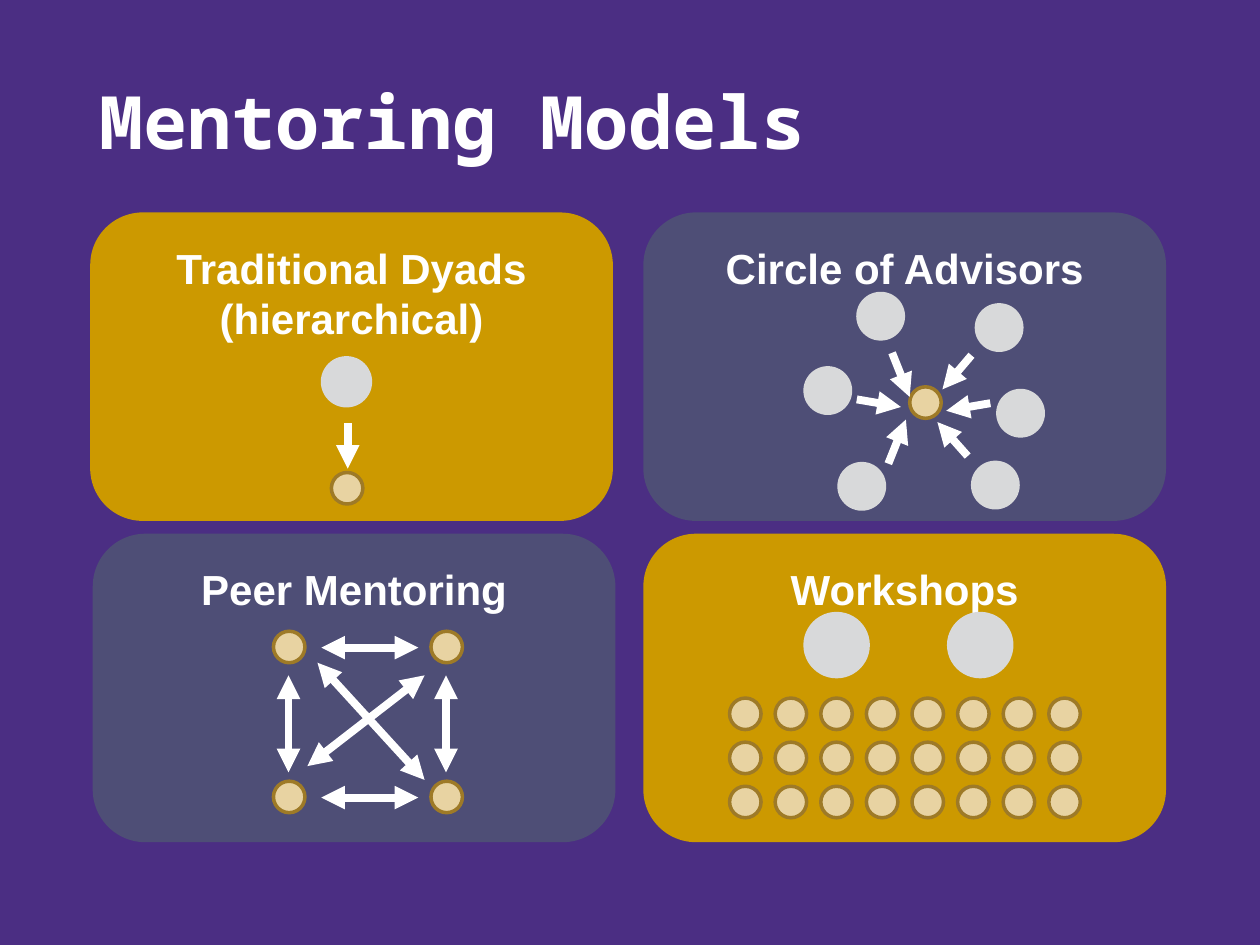
from lxml import etree
from pptx import Presentation
from pptx import util as u
from pptx.dml.color import RGBColor
from pptx.enum import shapes, text
from pptx.oxml.ns import qn

COLORS = {
    "purple": "4B2E83",
    "gold": "CC9900",
    "slate": "4E4E76",
    "white": "FFFFFF",
    "gray": "D8D9DA",
    "tan": "E8D3A2",
    "brown": "9E7A27",
}
COLS, ROWS = 100, 75
WIDTH, HEIGHT = u.Inches(10), u.Inches(7.5)
CARD_W, CARD_H = 41.2, 24.2
LEFT, RIGHT, TOP, BOTTOM = 7.3, 51.2, 17, 42.5
MENTEE, ADVISOR = 2.5, 3.6


def col(n):
    return round(WIDTH * n / COLS)


def row(n):
    return round(HEIGHT * n / ROWS)


def color(name):
    return RGBColor.from_string(COLORS[name])


def style_text(p, size, font):
    for r in p.runs:
        r.font.size = u.Pt(size)
        r.font.name = font
        r.font.bold = True
        r.font.color.rgb = color("white")


def add_shape(parent, kind, x, y, w, h, fill, line):
    sp = parent.add_shape(kind, col(x), row(y), col(w), row(h))
    sp.shadow.inherit = False
    sp.fill.solid()
    sp.fill.fore_color.rgb = color(fill)
    sp.line.color.rgb = color(line)
    sp.line.width = u.Pt(2)
    return sp


def add_title(s, title):
    sp = s.shapes.add_textbox(col(6.9), row(2.2), col(88.2), row(10.8))
    tf = sp.text_frame
    tf.word_wrap = True
    tf.vertical_anchor = text.MSO_ANCHOR.BOTTOM
    tf.margin_bottom = 0
    tf.text = title
    style_text(tf.paragraphs[0], 42, "Noto Sans Mono")


def add_card(s, x, y, fill, heading):
    sp = add_shape(s.shapes, shapes.MSO_SHAPE.ROUNDED_RECTANGLE,
                   x, y, CARD_W, CARD_H, fill, fill)
    tf = sp.text_frame
    tf.word_wrap = True
    tf.vertical_anchor = text.MSO_ANCHOR.TOP
    tf.margin_top = u.Inches(0.1)
    tf.text = heading
    p = tf.paragraphs[0]
    p.alignment = text.PP_ALIGN.CENTER
    p.line_spacing = u.Pt(29)
    style_text(p, 24, "Arial")


def add_advisor(group, x, y, size=ADVISOR):
    add_shape(group, shapes.MSO_SHAPE.OVAL, x, y, size, size, "gray", "gray")


def add_mentee(group, x, y):
    add_shape(group, shapes.MSO_SHAPE.OVAL, x, y, MENTEE, MENTEE, "tan", "brown")


def add_arrow(group, x1, y1, x2, y2, ends=("tailEnd",)):
    line = group.add_connector(shapes.MSO_CONNECTOR.STRAIGHT,
                               col(x1), row(y1), col(x2), row(y2))
    line.line.color.rgb = color("white")
    line.line.width = u.Pt(4.5)
    ln = line.line._get_or_add_ln()
    for end in ends:
        etree.SubElement(ln, qn(f"a:{end}"), type="triangle")
    etree.SubElement(line._element.spPr, qn("a:effectLst"))


def draw_dyad(group):
    add_advisor(group, 25.6, 28.4, 3.8)
    add_mentee(group, 26.3, 37.5)
    add_arrow(group, 27.6, 33.6, 27.6, 37.2)


def draw_circle(group):
    add_mentee(group, 72.2, 30.7)
    for x, y in [(66.6, 36.8), (63.9, 29.2), (68.1, 23.3),
                 (77.5, 24.2), (79.2, 31), (77.2, 36.7)]:
        add_advisor(group, x, y)
    for ends in [(68, 31.7, 71.5, 32.3), (70.8, 28, 72.2, 31.5),
                 (77.1, 28.2, 74.8, 30.9), (78.6, 32, 75.1, 32.6),
                 (70.5, 36.8, 71.9, 33.3), (76.8, 36.2, 74.4, 33.5)]:
        add_arrow(group, *ends)


def draw_peers(group):
    for x in (21.7, 34.2):
        for y in (50.1, 62):
            add_mentee(group, x, y)
    both = ("headEnd", "tailEnd")
    for y in (51.4, 63.3):
        add_arrow(group, 25.5, y, 33.2, y, both)
    for x in (22.9, 35.4):
        add_arrow(group, x, 53.6, x, 61.3, both)
    add_arrow(group, 24.4, 60.8, 33.7, 53.6, both)
    add_arrow(group, 25.2, 52.6, 33.7, 61.9, both)


def draw_workshop(group):
    for x in (63.9, 75.3):
        add_advisor(group, x, 48.7, 5)
    for r in range(3):
        for c in range(8):
            add_mentee(group, 57.9 + 3.62 * c, 55.4 + 3.5 * r)


def main():
    prs = Presentation()
    prs.slide_width, prs.slide_height = WIDTH, HEIGHT
    s = prs.slides.add_slide(prs.slide_layouts[6])
    s.background.fill.solid()
    s.background.fill.fore_color.rgb = color("purple")
    add_title(s, "Mentoring Models")
    add_card(s, LEFT, TOP, "gold", "Traditional Dyads (hierarchical)")
    add_card(s, LEFT + 0.2, BOTTOM, "slate", "Peer Mentoring")
    add_card(s, RIGHT, BOTTOM, "gold", "Workshops")
    add_card(s, RIGHT, TOP, "slate", "Circle of Advisors")
    for draw in (draw_dyad, draw_circle, draw_peers, draw_workshop):
        draw(s.shapes.add_group_shape().shapes)
    prs.save("out.pptx")


if __name__ == "__main__":
    main()
